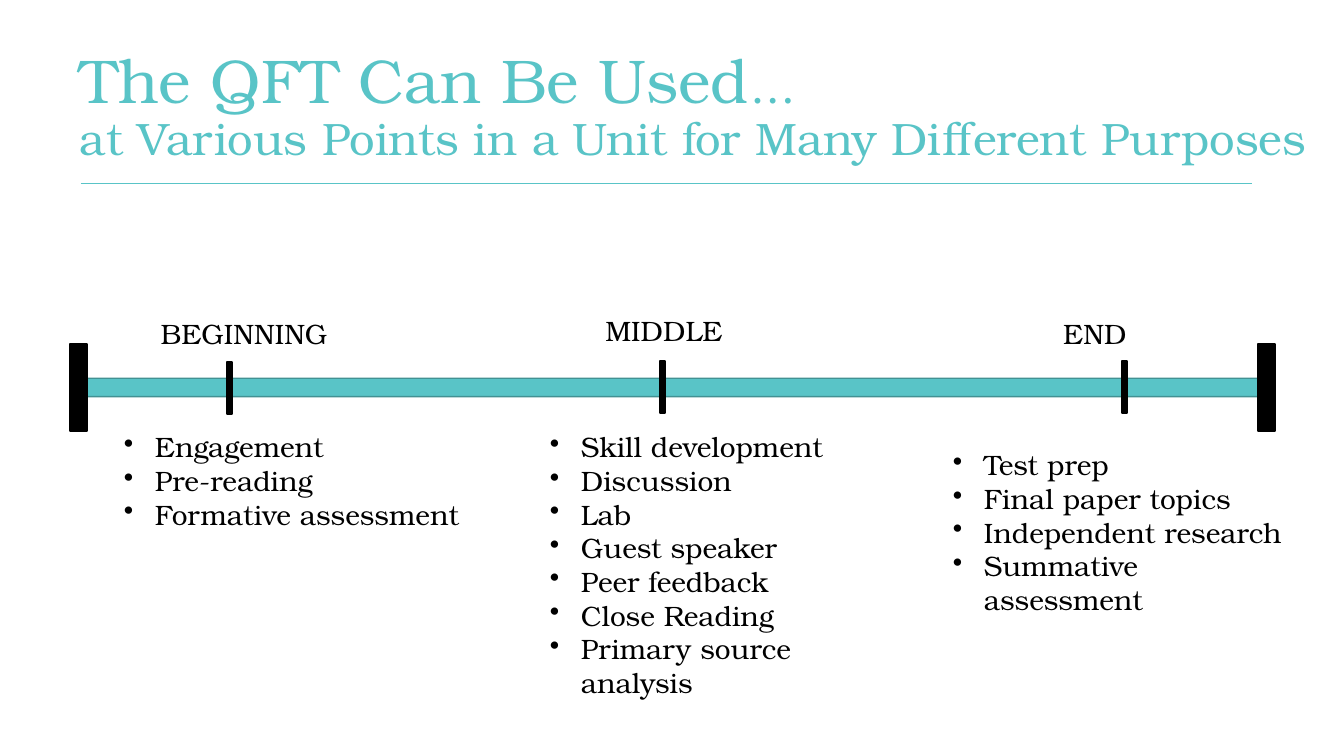
from lxml.etree import SubElement
from pptx import Presentation
from pptx.dml.color import RGBColor
from pptx.enum.shapes import MSO_CONNECTOR, MSO_SHAPE
from pptx.enum.text import PP_ALIGN
from pptx.oxml.ns import qn
from pptx.util import Pt

PX = 914400 / 100.8
THEME = {
    "font": "TeX Gyre Bonum",
    "teal": RGBColor.from_string("59C4C7"),
    "dark_teal": RGBColor.from_string("429193"),
    "black": RGBColor.from_string("000000"),
    "title": 44.1,
    "subtitle": 32.4,
    "body": 20,
}
INDENT = 31

STAGES = [
    {"label": "BEGINNING", "label_box": (134, 312, 220, 44), "tick": (227, 362),
     "list_box": (114, 425, 380, 146),
     "uses": ["Engagement", "Pre-reading", "Formative assessment"]},
    {"label": "MIDDLE", "label_box": (569, 309, 190, 44), "tick": (660, 361),
     "list_box": (540, 425, 313, 281),
     "uses": ["Skill development", "Discussion", "Lab", "Guest speaker",
              "Peer feedback", "Close Reading", "Primary source analysis"]},
    {"label": "END", "label_box": (1025, 312, 140, 44), "tick": (1122, 361),
     "list_box": (943, 443, 362, 214),
     "uses": ["Test prep", "Final paper topics", "Independent research",
              "Summative assessment"]},
]


def add_text(box, paragraphs, color, **paragraph_format):
    """Add a text box; each paragraph is a list of (text, size) runs."""
    frame = slide.shapes.add_textbox(*[round(n * PX) for n in box]).text_frame
    frame.word_wrap = True
    for index, runs in enumerate(paragraphs):
        paragraph = frame.paragraphs[0] if index == 0 else frame.add_paragraph()
        for name, value in paragraph_format.items():
            setattr(paragraph, name, value)
        for text, size in runs:
            run = paragraph.add_run()
            run.text = text
            values = {"name": THEME["font"], "size": Pt(THEME[size])}
            for name, value in values.items():
                setattr(run.font, name, value)
            run.font.color.rgb = THEME[color]
    return frame


def add_bar(kind, box, fill, line):
    shape = slide.shapes.add_shape(kind, *[round(n * PX) for n in box])
    shape.shadow.inherit = False
    shape.fill.solid()
    shape.fill.fore_color.rgb = THEME[fill]
    shape.line.color.rgb = THEME[line]
    shape.line.width = Pt(1)
    return shape


presentation = Presentation()
presentation.slide_width = round(1344 * PX)
presentation.slide_height = round(756 * PX)
slide = presentation.slides.add_slide(presentation.slide_layouts[6])

# Title and rule
rule = slide.shapes.add_connector(
    MSO_CONNECTOR.STRAIGHT, *[round(n * PX) for n in (81, 183, 1252, 183)])
rule.line.color.rgb = THEME["teal"]
rule.line.width = Pt(0.5)
SubElement(rule._element.spPr, qn("a:effectLst"))

add_text(
    (70, 45, 1270, 126),
    [[("The QFT Can Be Used", "title"), ("…", "subtitle")],
     [("at Various Points in a Unit for Many Different Purposes", "subtitle")]],
    "teal", line_spacing=0.9)

# Timeline
timeline = add_bar(MSO_SHAPE.LEFT_RIGHT_ARROW, (70, 369, 1205, 37), "teal", "dark_teal")
timeline.adjustments[0] = 0.5
timeline.adjustments[1] = 0.33

for stage in STAGES:
    add_text(stage["label_box"], [[(stage["label"], "body")]], "black",
             alignment=PP_ALIGN.CENTER)
    add_bar(MSO_SHAPE.FLOWCHART_PROCESS, (*stage["tick"], 5, 52), "black", "black")
    uses = add_text(stage["list_box"], [[(use, "body")] for use in stage["uses"]], "black")
    for paragraph in uses.paragraphs:
        properties = paragraph._p.get_or_add_pPr()
        properties.set("marL", str(round(INDENT * PX)))
        properties.set("indent", str(-round(INDENT * PX)))
        SubElement(properties, qn("a:buChar")).set("char", "•")

for left in (70, 1258):
    add_bar(MSO_SHAPE.FLOWCHART_PROCESS, (left, 344, 17, 87), "black", "black")

presentation.save("out.pptx")
